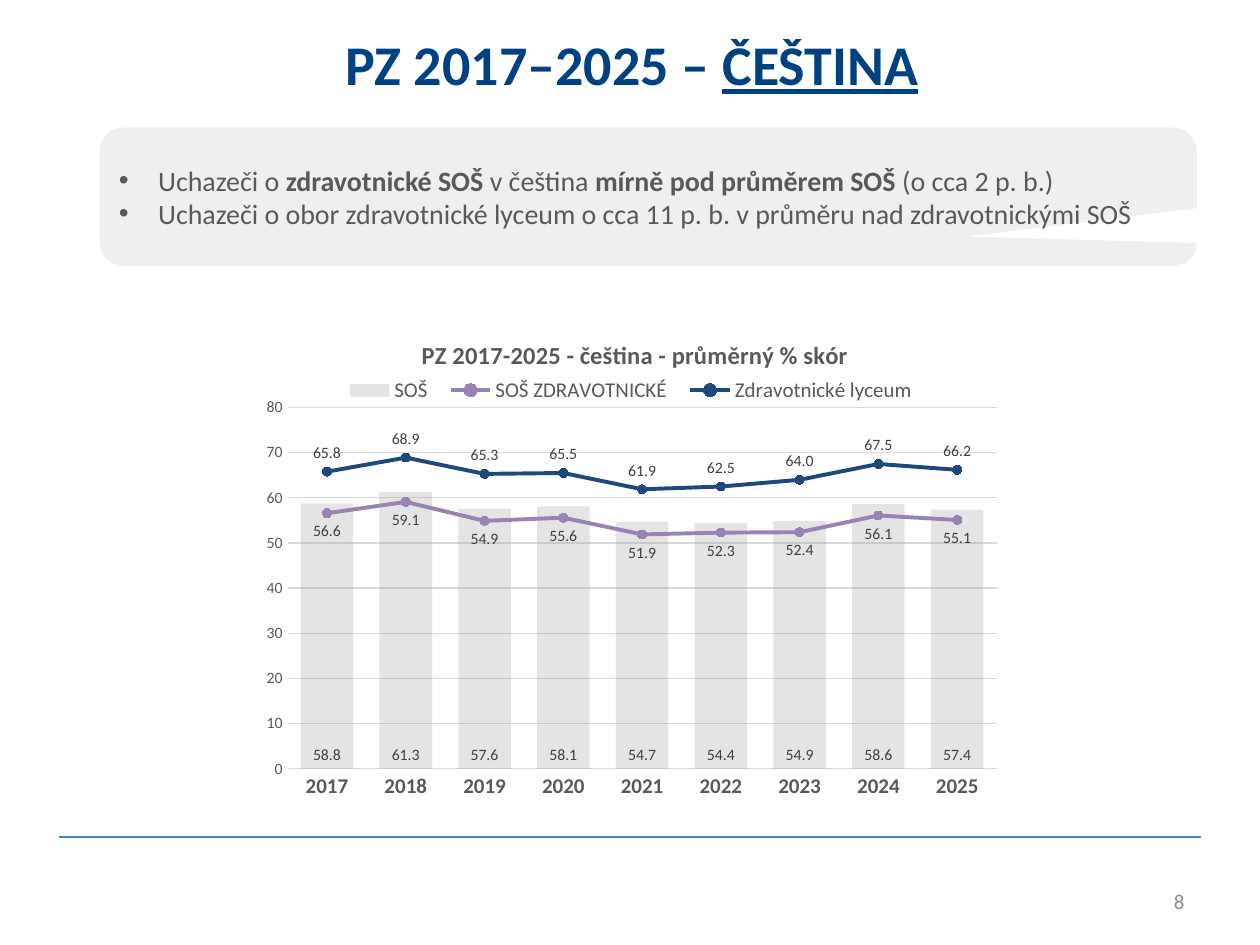
import pptx
import pptx.chart.data
import pptx.dml.color
import pptx.enum.chart
import pptx.enum.shapes
import pptx.enum.text
import pptx.oxml
import pptx.oxml.ns
import pptx.util

Cm, Pt = pptx.util.Cm, pptx.util.Pt
Align, Anchor = pptx.enum.text.PP_ALIGN, pptx.enum.text.MSO_ANCHOR
Label = pptx.enum.chart.XL_LABEL_POSITION
COLOURS = {
    "title": "004182", "body": "595959", "label": "404040", "number": "8C8C8C",
    "rule": "4B7EBC", "callout": "D9D9D9", "grid": "D9D9D9",
    "bars": "A6A6A6", "health": "9983B5", "lyceum": "1F497D",
}
YEARS = [str(year) for year in range(2017, 2026)]
SCORES = [
    ("SOŠ", (58.8, 61.3, 57.6, 58.1, 54.7, 54.4, 54.9, 58.6, 57.4), "bars", Label.INSIDE_BASE),
    ("SOŠ ZDRAVOTNICKÉ", (56.6, 59.1, 54.9, 55.6, 51.9, 52.3, 52.4, 56.1, 55.1), "health", Label.BELOW),
    ("Zdravotnické lyceum", (65.8, 68.9, 65.3, 65.5, 61.9, 62.5, 64.0, 67.5, 66.2), "lyceum", Label.ABOVE),
]


class SlideBuilder:
    """Holds the style and the current slide and draws each kind of element."""

    font = "Calibri"

    def __init__(self, page):
        self.page = page

    def colour(self, name):
        return pptx.dml.color.RGBColor.from_string(COLOURS[name])

    def xml(self, tag, content="", prefix="c"):
        names = pptx.oxml.ns.nsdecls(prefix)
        return pptx.oxml.parse_xml(f"<{prefix}:{tag} {names}>{content}</{prefix}:{tag}>")

    def style(self, font, size, colour, bold=False):
        font.name, font.size, font.bold = self.font, Pt(size), bold
        font.color.rgb = self.colour(colour)

    def fill(self, target, colour, opacity=100):
        target.fill.solid()
        target.fill.fore_color.rgb = self.colour(colour)
        if opacity < 100:
            for node in target.fill._xPr.xpath("./a:solidFill/a:srgbClr"):
                alpha = self.xml("alpha", prefix="a")
                alpha.set("val", str(opacity * 1000))
                node.append(alpha)

    def outline(self, line, colour, width):
        line.color.rgb = self.colour(colour)
        line.width = Pt(width)

    def span(self, para, text, size, colour, bold=False, underline=False):
        span = para.add_run()
        span.text = text
        self.style(span.font, size, colour, bold)
        if underline:
            span.font.underline = True

    def text(self, area, spans, size, colour, align, bold=False, spacing=1.0):
        frame = self.page.shapes.add_textbox(*map(Cm, area)).text_frame
        frame.word_wrap = True
        frame.vertical_anchor = Anchor.MIDDLE
        para = frame.paragraphs[0]
        para.alignment, para.line_spacing = align, spacing
        for text, underline in spans:
            self.span(para, text, size, colour, bold, underline)

    def rule(self, left, right, top):
        line = self.page.shapes.add_connector(
            pptx.enum.shapes.MSO_CONNECTOR.STRAIGHT, Cm(left), Cm(top), Cm(right), Cm(top))
        self.outline(line.line, "rule", 0.75)
        line._element.spPr.append(self.xml("effectLst", prefix="a"))

    def callout(self, area, pointer, bullets):
        box = self.page.shapes.add_shape(
            pptx.enum.shapes.MSO_SHAPE.ROUNDED_RECTANGULAR_CALLOUT, *map(Cm, area))
        for index, value in enumerate(pointer):
            box.adjustments[index] = value
        box.shadow.inherit = False
        self.fill(box, "callout", 40)
        box.line.fill.background()
        frame = box.text_frame
        frame.word_wrap = True
        frame.vertical_anchor = Anchor.MIDDLE
        for index, spans in enumerate(bullets):
            para = frame.add_paragraph() if index else frame.paragraphs[0]
            para.alignment = Align.LEFT
            for text, bold in spans:
                self.span(para, text, 16, "body", bold)
            props = para._p.get_or_add_pPr()
            props.set("marL", str(Cm(0.79)))
            props.set("indent", str(Cm(-0.79)))
            for tag, key, value in (("buFont", "typeface", "Arial"), ("buChar", "char", "•")):
                bullet = self.xml(tag, prefix="a")
                bullet.set(key, value)
                props.append(bullet)

    def place(self, parent, index, inner=False, **values):
        for old in parent.xpath("./c:layout"):
            parent.remove(old)
        parts = '<c:layoutTarget val="inner"/>' if inner else ""
        parts += '<c:xMode val="edge"/><c:yMode val="edge"/>'
        parts += "".join(f'<c:{key} val="{value}"/>' for key, value in values.items())
        parent.insert(index, self.xml("layout", f"<c:manualLayout>{parts}</c:manualLayout>"))

    def split_lines(self, chart):
        bars = chart.element.xpath(".//c:barChart")[0]
        axes = "".join(f'<c:axId val="{axis.get("val")}"/>' for axis in bars.xpath("./c:axId"))
        lines = self.xml("lineChart", '<c:grouping val="standard"/><c:varyColors val="0"/>'
                         f'<c:marker val="1"/>{axes}')
        for index, series in enumerate(bars.xpath("./c:ser")[1:]):
            for node in series.xpath("./c:invertIfNegative"):
                series.remove(node)
            lines.insert(2 + index, series)
        bars.addnext(lines)

    def format_series(self, series, colour, position):
        if colour == "bars":
            self.fill(series.format, colour, 30)
        else:
            series.smooth = False
            self.outline(series.format.line, colour, 2.25)
            series.marker.style = pptx.enum.chart.XL_MARKER_STYLE.CIRCLE
            series.marker.size = 5
            self.fill(series.marker.format, colour)
            self.outline(series.marker.format.line, colour, 0.75)
        labels = series.data_labels
        labels.show_value = True
        labels.position = position
        labels.number_format = "#,##0.0"
        labels.number_format_is_linked = False
        self.style(labels.font, 9, "label")

    def combined_chart(self, area, title, years, scores):
        data = pptx.chart.data.CategoryChartData(number_format="0.0")
        data.categories = years
        for name, values, _, _ in scores:
            data.add_series(name, values)
        chart = self.page.shapes.add_chart(
            pptx.enum.chart.XL_CHART_TYPE.COLUMN_CLUSTERED, *map(Cm, area), data).chart
        chart.font.name, chart.font.size = self.font, Pt(10)
        self.split_lines(chart)
        bars = chart.plots[0]
        bars.gap_width = 50
        bars.vary_by_categories = False
        series_list = [series for plot in chart.plots for series in plot.series]
        for series, (_, _, colour, position) in zip(series_list, scores):
            self.format_series(series, colour, position)

        chart.has_title = True
        self.span(chart.chart_title.text_frame.paragraphs[0], title, 14, "body", True)
        chart.chart_title.include_in_layout = False
        chart.has_legend = True
        chart.legend.position = pptx.enum.chart.XL_LEGEND_POSITION.BOTTOM
        chart.legend.include_in_layout = False
        self.style(chart.legend.font, 12, "body")
        root = chart.element
        self.place(root.xpath(".//c:plotArea")[0], 0, True, x=0.05, y=0.19, w=0.93, h=0.73)
        self.place(root.xpath("./c:chart/c:title")[0], 1, x=0.22, y=0.04)
        self.place(root.xpath(".//c:legend")[0], 1, x=0.11, y=0.12, w=0.78, h=0.07)

        no_tick = pptx.enum.chart.XL_TICK_MARK.NONE
        years_axis, score_axis = chart.category_axis, chart.value_axis
        for axis in (years_axis, score_axis):
            axis.major_tick_mark = axis.minor_tick_mark = no_tick
        self.style(years_axis.tick_labels.font, 12, "body", True)
        self.outline(years_axis.format.line, "grid", 0.75)
        score_axis.minimum_scale, score_axis.maximum_scale, score_axis.major_unit = 0, 80, 10
        score_axis.tick_labels.number_format = "#,##0"
        score_axis.tick_labels.number_format_is_linked = False
        self.style(score_axis.tick_labels.font, 9, "body")
        score_axis.format.line.fill.background()
        self.outline(score_axis.major_gridlines.format.line, "grid", 0.75)


def main():
    deck = pptx.Presentation()
    deck.slide_width, deck.slide_height = Cm(25.4), Cm(19.05)
    builder = SlideBuilder(deck.slides.add_slide(deck.slide_layouts[6]))
    builder.rule(1.19, 24.21, 16.87)
    builder.text((18.21, 17.65, 5.92, 1.02), [("8", False)], 12, "number", Align.RIGHT)
    builder.text((0.41, 0.3, 24.66, 2.13), [("PZ 2017–2025 – ", False), ("ČEŠTINA", True)],
                 32, "title", Align.CENTER, True, 0.9)
    builder.callout((2.01, 2.57, 22.12, 2.79), (0.29, 0.29, 0.17), [
        [("Uchazeči o ", False), ("zdravotnické SOŠ", True), (" v čeština ", False),
         ("mírně pod průměrem SOŠ ", True), ("(o cca 2 p. b.)", False)],
        [("Uchazeči o obor zdravotnické lyceum o cca 11 p. b. v průměru nad zdravotnickými SOŠ", False)],
    ])
    builder.combined_chart((5.03, 6.32, 15.37, 9.98),
                           "PZ 2017-2025 - čeština - průměrný % skór", YEARS, SCORES)
    deck.save("out.pptx")


if __name__ == "__main__":
    main()
